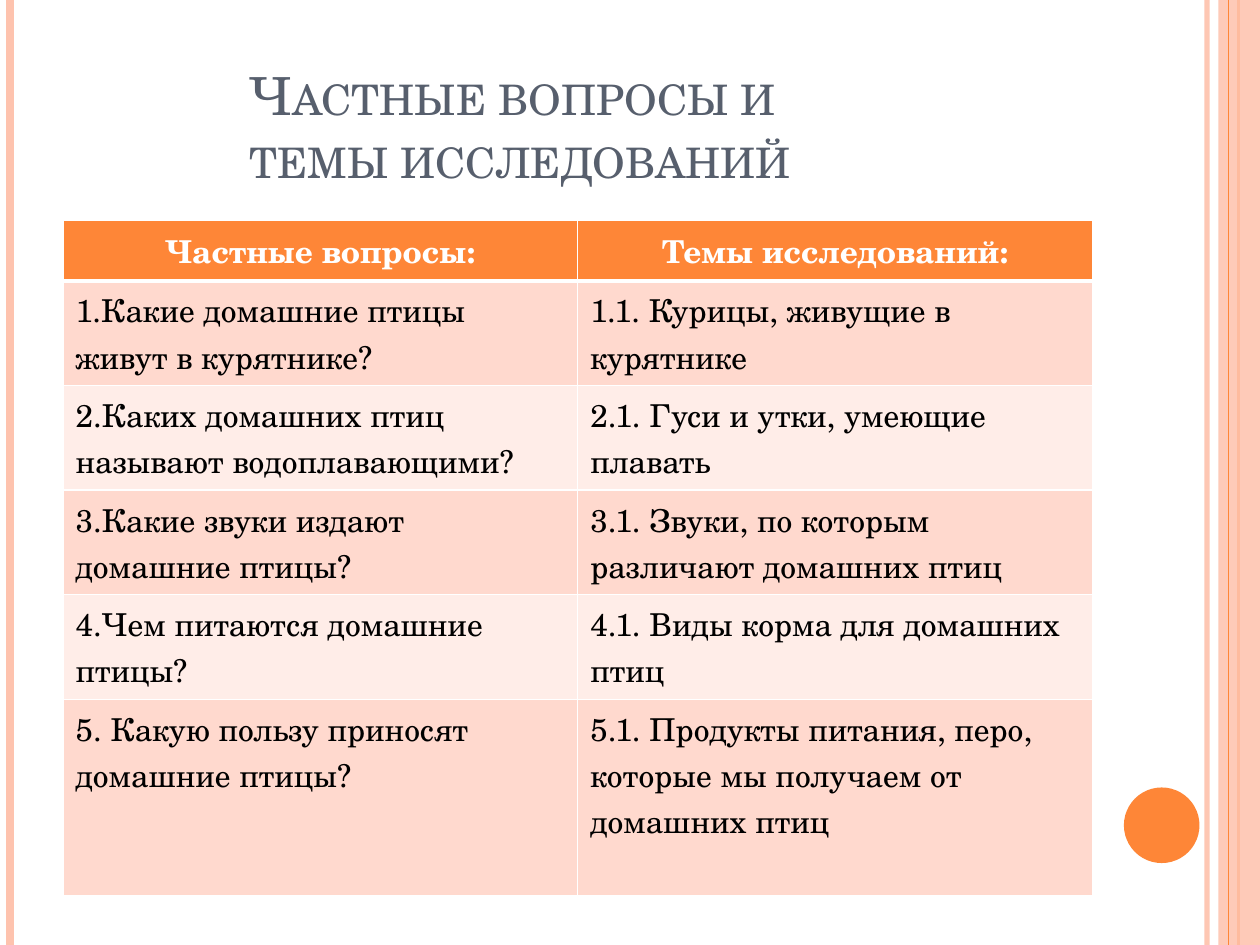
from dataclasses import dataclass

from pptx import Presentation
from pptx.dml.color import RGBColor
from pptx.enum.shapes import MSO_CONNECTOR, MSO_SHAPE
from pptx.enum.text import MSO_ANCHOR, PP_ALIGN
from pptx.oxml.ns import qn
from pptx.util import Inches, Pt
from lxml import etree

LINE = MSO_CONNECTOR.STRAIGHT
RECT, OVAL = MSO_SHAPE.RECTANGLE, MSO_SHAPE.OVAL
BOTTOM = MSO_ANCHOR.BOTTOM
LEFT, CENTER = PP_ALIGN.LEFT, PP_ALIGN.CENTER


@dataclass(frozen=True)
class Theme:
    font: str = "TeX Gyre Schola"
    accent: str = "FE8637"
    pale: str = "FEC3AE"
    title: str = "575F6D"
    white: str = "FFFFFF"
    black: str = "000000"
    bands: tuple = ("FFD9CE", "FFEDE8")
    title_size: int = 30
    table_size: int = 18


THEME = Theme()
TITLE = ("Частные вопросы и", "темы исследований")
ROWS = [
    ("Частные вопросы:", "Темы исследований:"),
    ("1.Какие домашние птицы живут в курятнике?", "1.1. Курицы, живущие в курятнике"),
    ("2.Каких домашних птиц называют водоплавающими?", "2.1. Гуси и утки, умеющие плавать"),
    ("3.Какие звуки издают домашние птицы?", "3.1. Звуки, по которым различают домашних птиц"),
    ("4.Чем питаются домашние птицы?", "4.1. Виды корма для домашних птиц"),
    ("5. Какую пользу приносят домашние птицы?",
     "5.1. Продукты питания, перо, которые мы получаем от домашних птиц"),
]
ROW_HEIGHTS = [0.48] + [0.83] * 4 + [1.56]


def set_attrs(obj, values):
    for name, value in values.items():
        setattr(obj, name, value)


def set_alpha(fill_parent, percent):
    color = next(fill_parent.iter(qn("a:srgbClr")))
    etree.SubElement(color, qn("a:alpha"), val=str(percent * 1000))


def add_run(p, text, size, color, bold=False):
    r = p.add_run()
    r.text = text
    set_attrs(r.font, {"name": THEME.font, "size": Pt(size), "bold": bold})
    r.font.color.rgb = RGBColor.from_string(color)
    return r


def add_stripe(slide, x, color, width, alpha=100):
    sp = slide.shapes.add_connector(LINE, Inches(x), 0, Inches(x), Inches(7.5))
    sp.line.color.rgb = RGBColor.from_string(color)
    sp.line.width = Pt(width)
    props = sp._element.spPr
    if alpha < 100:
        set_alpha(props, alpha)
    etree.SubElement(props, qn("a:effectLst"))


def add_block(slide, kind, box, color, alpha=100):
    sp = slide.shapes.add_shape(kind, *map(Inches, box))
    sp.shadow.inherit = False
    sp.fill.solid()
    sp.fill.fore_color.rgb = RGBColor.from_string(color)
    sp.line.fill.background()
    if alpha < 100:
        set_alpha(sp._element.spPr, alpha)


def add_title(slide, lines):
    sp = slide.shapes.add_textbox(*map(Inches, (0.5, 0.3, 8.17, 1.25)))
    tf = sp.text_frame
    set_attrs(tf, {"word_wrap": True, "vertical_anchor": BOTTOM, "margin_left": Inches(1.48)})
    p = tf.paragraphs[0]
    for i, line in enumerate(lines):
        if i:
            p.add_line_break()
        r = add_run(p, line, THEME.title_size, THEME.title)
        r.font._element.set("cap", "small")


def set_borders(cell, bottom):
    props = cell._tc.get_or_add_tcPr()
    widths = {"lnL": 1, "lnR": 1, "lnT": 1, "lnB": bottom}
    for i, (side, width) in enumerate(widths.items()):
        ln = etree.Element(qn(f"a:{side}"), w=str(Pt(width)))
        fill = etree.SubElement(ln, qn("a:solidFill"))
        etree.SubElement(fill, qn("a:srgbClr"), val=THEME.white)
        props.insert(i, ln)


def fill_cell(cell, text, row):
    header = row == 0
    p = cell.text_frame.paragraphs[0]
    p.alignment = CENTER if header else LEFT
    add_run(p, text, THEME.table_size, THEME.white if header else THEME.black, header)
    cell.fill.solid()
    color = THEME.accent if header else THEME.bands[(row - 1) % 2]
    cell.fill.fore_color.rgb = RGBColor.from_string(color)
    set_borders(cell, 3 if header else 1)


def add_questions_table(slide, rows, heights):
    box = map(Inches, (0.5, 1.75, 8.17, sum(heights)))
    table = slide.shapes.add_table(len(rows), len(rows[0]), *box).table
    for i, (texts, height) in enumerate(zip(rows, heights)):
        table.rows[i].height = Inches(height)
        for j, text in enumerate(texts):
            fill_cell(table.cell(i, j), text, i)


def main():
    prs = Presentation()
    set_attrs(prs, {"slide_width": Inches(10), "slide_height": Inches(7.5)})
    slide = prs.slides.add_slide(prs.slide_layouts[6])
    add_stripe(slide, 9.58, THEME.pale, 3, 93)
    add_stripe(slide, 0.08, THEME.pale, 4.5)
    add_stripe(slide, 9.83, THEME.accent, 1.5)
    add_block(slide, RECT, (9.67, 0, 0.33, 7.5), THEME.pale, 87)
    add_stripe(slide, 9.75, THEME.accent, 0.75)
    add_block(slide, OVAL, (8.92, 6.25, 0.6, 0.6), THEME.accent)
    add_title(slide, TITLE)
    add_questions_table(slide, ROWS, ROW_HEIGHTS)
    prs.save("out.pptx")


if __name__ == "__main__":
    main()
